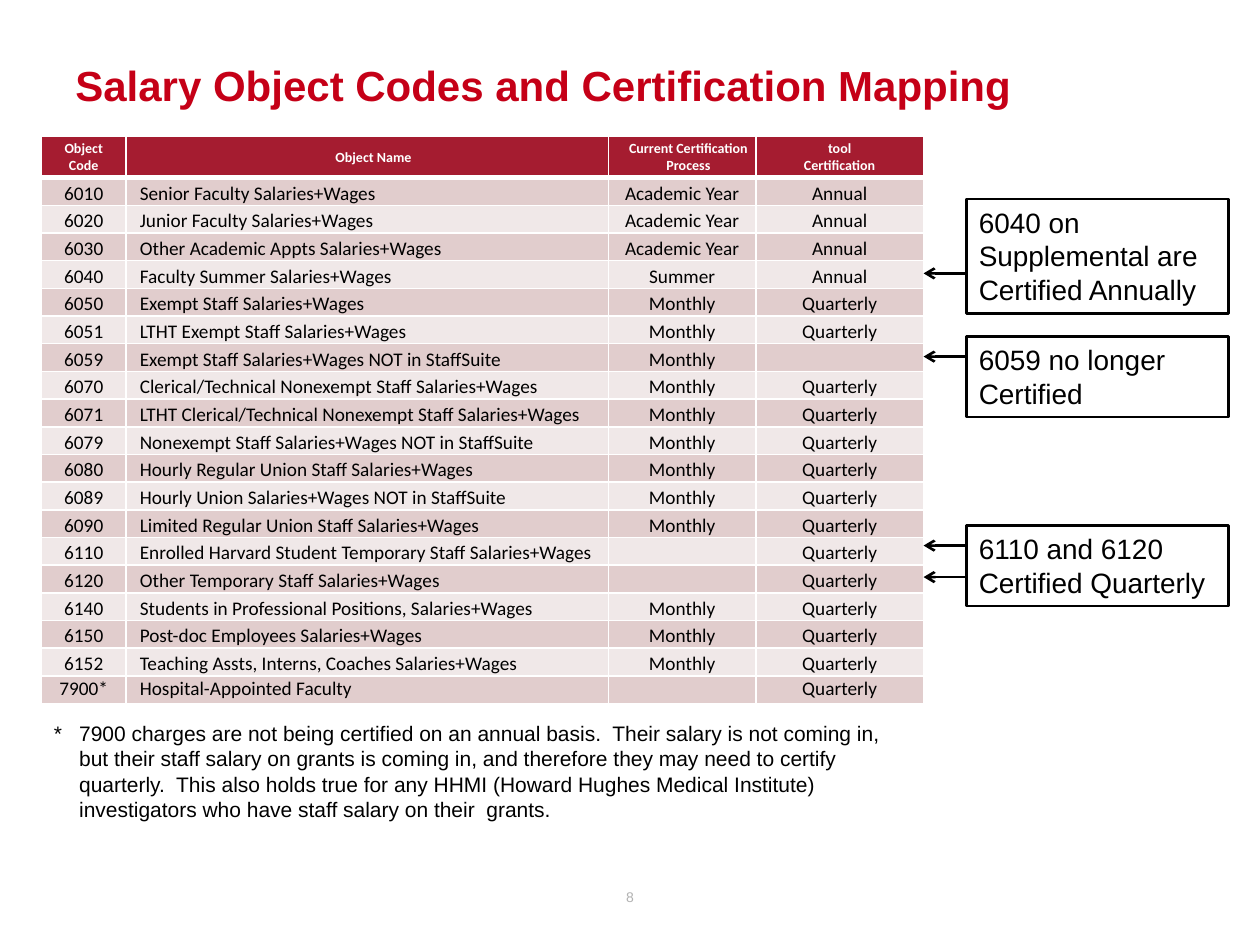
import pptx
import pptx.dml.color
import pptx.enum.shapes
import pptx.enum.text
import pptx.oxml.ns
import pptx.util
from lxml import etree

Inches = pptx.util.Inches
Pt = pptx.util.Pt
RGBColor = pptx.dml.color.RGBColor
Align = pptx.enum.text.PP_ALIGN
Anchor = pptx.enum.text.MSO_ANCHOR
qn = pptx.oxml.ns.qn

TITLE_RED = RGBColor(0xC5, 0x00, 0x17)
HEADER_RED = RGBColor(0xA5, 0x1C, 0x30)
BANDS = (RGBColor(0xE1, 0xCD, 0xCD), RGBColor(0xF0, 0xE8, 0xE8))
BLACK = RGBColor(0, 0, 0)
WHITE = RGBColor(0xFF, 0xFF, 0xFF)
PAGE_GREY = RGBColor(0xB2, 0xB2, 0xB2)

COLUMN_WIDTHS = (0.67, 3.83, 1.17, 1.33)
HEADER_HEIGHT, ROW_HEIGHT = 0.33, 0.22
HEADERS = ("Object\nCode", "Object Name", "Current Certification Process", "tool\nCertification")
ROWS = (
    ("6010", "Senior Faculty Salaries+Wages", "Academic Year", "Annual"),
    ("6020", "Junior Faculty Salaries+Wages", "Academic Year", "Annual"),
    ("6030", "Other Academic Appts Salaries+Wages", "Academic Year", "Annual"),
    ("6040", "Faculty Summer Salaries+Wages", "Summer", "Annual"),
    ("6050", "Exempt Staff Salaries+Wages", "Monthly", "Quarterly"),
    ("6051", "LTHT Exempt Staff Salaries+Wages", "Monthly", "Quarterly"),
    ("6059", "Exempt Staff Salaries+Wages NOT in StaffSuite", "Monthly", ""),
    ("6070", "Clerical/Technical Nonexempt Staff Salaries+Wages", "Monthly", "Quarterly"),
    ("6071", "LTHT Clerical/Technical Nonexempt Staff Salaries+Wages", "Monthly", "Quarterly"),
    ("6079", "Nonexempt Staff Salaries+Wages NOT in StaffSuite", "Monthly", "Quarterly"),
    ("6080", "Hourly Regular Union Staff Salaries+Wages", "Monthly", "Quarterly"),
    ("6089", "Hourly Union Salaries+Wages NOT in StaffSuite", "Monthly", "Quarterly"),
    ("6090", "Limited Regular Union Staff Salaries+Wages", "Monthly", "Quarterly"),
    ("6110", "Enrolled Harvard Student Temporary Staff Salaries+Wages", "", "Quarterly"),
    ("6120", "Other Temporary Staff Salaries+Wages", "", "Quarterly"),
    ("6140", "Students in Professional Positions, Salaries+Wages", "Monthly", "Quarterly"),
    ("6150", "Post-doc Employees Salaries+Wages", "Monthly", "Quarterly"),
    ("6152", "Teaching Assts, Interns, Coaches Salaries+Wages", "Monthly", "Quarterly"),
    ("7900*", "Hospital-Appointed Faculty", "", "Quarterly"),
)
FOOTNOTE = (
    "*\t7900 charges are not being certified on an annual basis.\u00a0 Their salary is not "
    "coming in, but their staff salary on grants is coming in, and therefore they may need to "
    "certify quarterly.\u00a0 This also holds true for any HHMI (Howard Hughes Medical Institute) "
    "investigators who have staff salary on their \u00a0grants."
)
# Text, top, height, and the heights of the arrows back to the table
CALLOUTS = (
    ("6040 on Supplemental are Certified Annually", 1.58, 0.91, (2.17,)),
    ("6059 no longer Certified", 2.67, 0.64, (2.83,)),
    ("6110 and 6120 Certified Quarterly", 4.17, 0.64, (4.33, 4.58)),
)


def style_paragraph(para, size, color, bold=False, name="Arial", align=Align.LEFT):
    para.alignment = align
    para.font.name = name
    para.font.size = Pt(size)
    para.font.bold = bold
    para.font.color.rgb = color


def add_text(page, text, left, top, width, height, size, color,
             anchor=Anchor.TOP, **style):
    box = page.shapes.add_textbox(Inches(left), Inches(top), Inches(width), Inches(height))
    frame = box.text_frame
    frame.word_wrap = True
    frame.vertical_anchor = anchor
    para = frame.paragraphs[0]
    para.text = text
    style_paragraph(para, size, color, **style)
    return para


def set_borders(cell, bottom_width):
    properties = cell._tc.get_or_add_tcPr()
    for side, width in (("lnL", 1), ("lnR", 1), ("lnT", 1), ("lnB", bottom_width)):
        line = etree.SubElement(properties, qn("a:" + side), w=str(Pt(width)))
        fill = etree.SubElement(line, qn("a:solidFill"))
        etree.SubElement(fill, qn("a:srgbClr"), val=str(WHITE))


def fill_cell(cell, text, fill, anchor, indent, bottom_width, size, color, **style):
    set_borders(cell, bottom_width)
    cell.fill.solid()
    cell.fill.fore_color.rgb = fill
    cell.margin_left = cell.margin_right = cell.margin_top = Inches(0.01)
    cell.margin_bottom = 0
    cell.vertical_anchor = anchor
    cell.text_frame.text = text
    for para in cell.text_frame.paragraphs:
        style_paragraph(para, size, color, name="Calibri", **style)
        if indent:
            para._p.get_or_add_pPr().set("marL", str(Inches(0.1)))
        if not text:  # keeps an empty cell as low as its row
            etree.SubElement(para._p, qn("a:endParaRPr"), sz=str(size * 100))


def add_code_table(page, left, top):
    height = HEADER_HEIGHT + ROW_HEIGHT * len(ROWS)
    frame = page.shapes.add_table(len(ROWS) + 1, len(COLUMN_WIDTHS), Inches(left), Inches(top),
                                  Inches(sum(COLUMN_WIDTHS)), Inches(height))
    table = frame.table
    for column, width in zip(table.columns, COLUMN_WIDTHS):
        column.width = Inches(width)
    for row in table.rows:
        row.height = Inches(ROW_HEIGHT)
    table.rows[0].height = Inches(HEADER_HEIGHT)

    for c, header in enumerate(HEADERS):
        fill_cell(table.cell(0, c), header, HEADER_RED, Anchor.MIDDLE, c in (1, 2), 3,
                  8, WHITE, bold=True, align=Align.CENTER)
    for r, values in enumerate(ROWS, start=1):
        anchor = Anchor.TOP if r == len(ROWS) else Anchor.BOTTOM
        for c, value in enumerate(values):
            is_name = c == 1
            fill_cell(table.cell(r, c), value, BANDS[(r - 1) % 2], anchor, is_name, 1,
                      11, BLACK, align=Align.LEFT if is_name else Align.CENTER)


def add_arrow(page, start, end, y):
    arrow = page.shapes.add_connector(pptx.enum.shapes.MSO_CONNECTOR.STRAIGHT,
                                      Inches(start), Inches(y), Inches(end), Inches(y))
    arrow.line.color.rgb = BLACK
    arrow.line.width = Pt(1.5)
    etree.SubElement(arrow.line._get_or_add_ln(), qn("a:tailEnd"), type="arrow")
    etree.SubElement(arrow._element.spPr, qn("a:effectLst"))


def add_callout(page, text, left, top, width, height, table_edge, arrow_heights):
    for y in arrow_heights:
        add_arrow(page, left, table_edge, y)
    box = page.shapes.add_shape(pptx.enum.shapes.MSO_SHAPE.RECTANGLE, Inches(left), Inches(top),
                                Inches(width), Inches(height))
    box.shadow.inherit = False
    box.fill.background()
    box.line.color.rgb = BLACK
    box.line.width = Pt(1.5)
    frame = box.text_frame
    frame.word_wrap = True
    frame.auto_size = pptx.enum.text.MSO_AUTO_SIZE.SHAPE_TO_FIT_TEXT
    frame.vertical_anchor = Anchor.TOP
    frame.text = text
    style_paragraph(frame.paragraphs[0], 16, BLACK)


def add_footnote(page, left, top, width, height):
    para = add_text(page, FOOTNOTE, left, top, width, height, 12, BLACK)
    properties = para._p.get_or_add_pPr()
    properties.set("marL", str(Inches(0.2)))
    properties.set("indent", str(Inches(-0.2)))


def main():
    deck = pptx.Presentation()
    deck.slide_width, deck.slide_height = Inches(10), Inches(7.5)
    page = deck.slides.add_slide(deck.slide_layouts[6])

    # Title
    add_text(page, "Salary Object Codes and Certification Mapping", 0.5, 0.17, 9.08, 1,
             24, TITLE_RED, anchor=Anchor.MIDDLE, bold=True)
    # Table with its footnote
    add_code_table(page, 0.33, 1.08)
    add_footnote(page, 0.33, 5.67, 6.83, 0.91)
    # Callouts beside the table
    for text, top, height, arrow_heights in CALLOUTS:
        add_callout(page, text, 7.67, top, 2.08, height, 7.33, arrow_heights)
    # Page number
    add_text(page, "8", 0, 6.92, 10, 0.4, 8, PAGE_GREY, anchor=Anchor.MIDDLE,
             align=Align.CENTER)

    deck.save("out.pptx")


if __name__ == "__main__":
    main()
